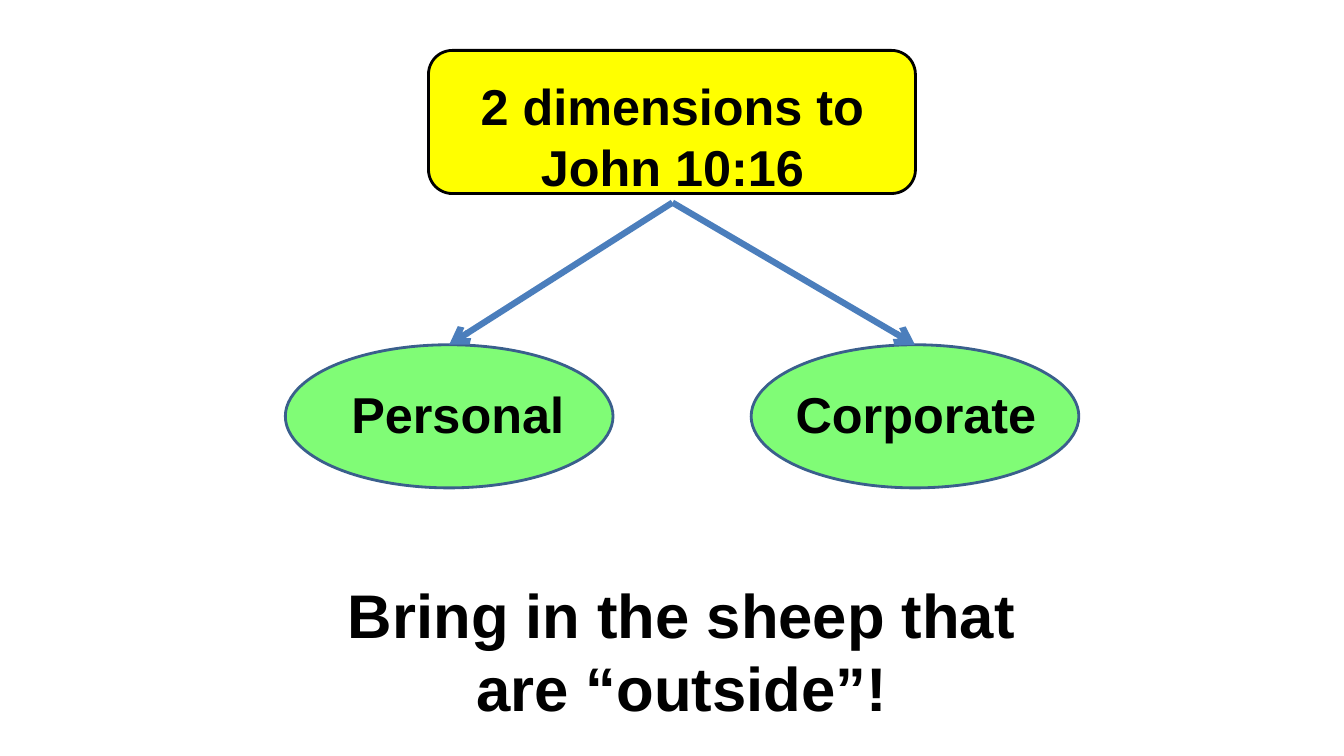
from lxml.etree import SubElement
from pptx import Presentation
from pptx.dml.color import RGBColor
from pptx.enum.shapes import MSO_CONNECTOR, MSO_SHAPE
from pptx.enum.text import MSO_AUTO_SIZE, PP_ALIGN
from pptx.oxml.ns import qn
from pptx.util import Inches, Pt

BLACK = RGBColor(0x00, 0x00, 0x00)
YELLOW = RGBColor(0xFF, 0xFF, 0x00)
GREEN = RGBColor(0x80, 0xFC, 0x76)
DARK_BLUE = RGBColor(0x3A, 0x5F, 0x8C)
BLUE = RGBColor(0x4B, 0x7E, 0xBC)

BRANCHES = [
    ("Personal", 2.83, 3.33, 2.42),
    ("Corporate", 7.45, 7.67, 2.83),
]


def add_panel(slide, preset, left, top, width, height, fill, outline):
    """Add a filled, outlined shape."""
    panel = slide.shapes.add_shape(
        preset, Inches(left), Inches(top), Inches(width), Inches(height))
    panel.shadow.inherit = False
    panel.fill.solid()
    panel.fill.fore_color.rgb = fill
    panel.line.color.rgb = outline
    panel.line.width = Pt(2)
    return panel


def add_text(slide, text, left, top, width, height, size=36, color=BLACK,
             bold=True, font="Arial", align=PP_ALIGN.CENTER):
    """Add a wrapping text box with one formatted paragraph."""
    label = slide.shapes.add_textbox(
        Inches(left), Inches(top), Inches(width), Inches(height))
    frame = label.text_frame
    frame.word_wrap = True
    frame.auto_size = MSO_AUTO_SIZE.SHAPE_TO_FIT_TEXT
    paragraph = frame.paragraphs[0]
    paragraph.alignment = align
    run = paragraph.add_run()
    run.text = text
    run.font.name = font
    run.font.size = Pt(size)
    run.font.bold = bold
    run.font.color.rgb = color
    return label


def add_arrow(slide, source, target):
    """Join the bottom of the source to the top of the target with an arrow."""
    arrow = slide.shapes.add_connector(MSO_CONNECTOR.STRAIGHT, 0, 0, 0, 0)
    arrow.begin_connect(source, 2)
    arrow.end_connect(target, 0)
    arrow.line.color.rgb = BLUE
    arrow.line.width = Pt(4.5)
    SubElement(arrow.line._get_or_add_ln(), qn("a:tailEnd"), type="arrow")
    SubElement(arrow._element.spPr, qn("a:effectLst"))


def main():
    """Build the slide and save it."""
    presentation = Presentation()
    presentation.slide_width = Inches(13.33)
    presentation.slide_height = Inches(7.5)
    slide = presentation.slides.add_slide(presentation.slide_layouts[6])

    add_panel(slide, MSO_SHAPE.ROUNDED_RECTANGLE, 4.25, 0.5, 4.83, 1.42,
              YELLOW, BLACK)
    heading = add_text(slide, "2 dimensions to John 10:16",
                       4.46, 0.7, 4.42, 1.31)
    for name, oval_left, name_left, name_width in BRANCHES:
        oval = add_panel(slide, MSO_SHAPE.OVAL, oval_left, 3.42, 3.25, 1.42,
                         GREEN, DARK_BLUE)
        add_arrow(slide, heading, oval)
        add_text(slide, name, name_left, 3.75, name_width, 0.71)
    add_text(slide, "Bring in the sheep that are “outside”!",
             2.83, 5.67, 7.87, 1.58, size=44)

    presentation.save("out.pptx")


if __name__ == "__main__":
    main()
